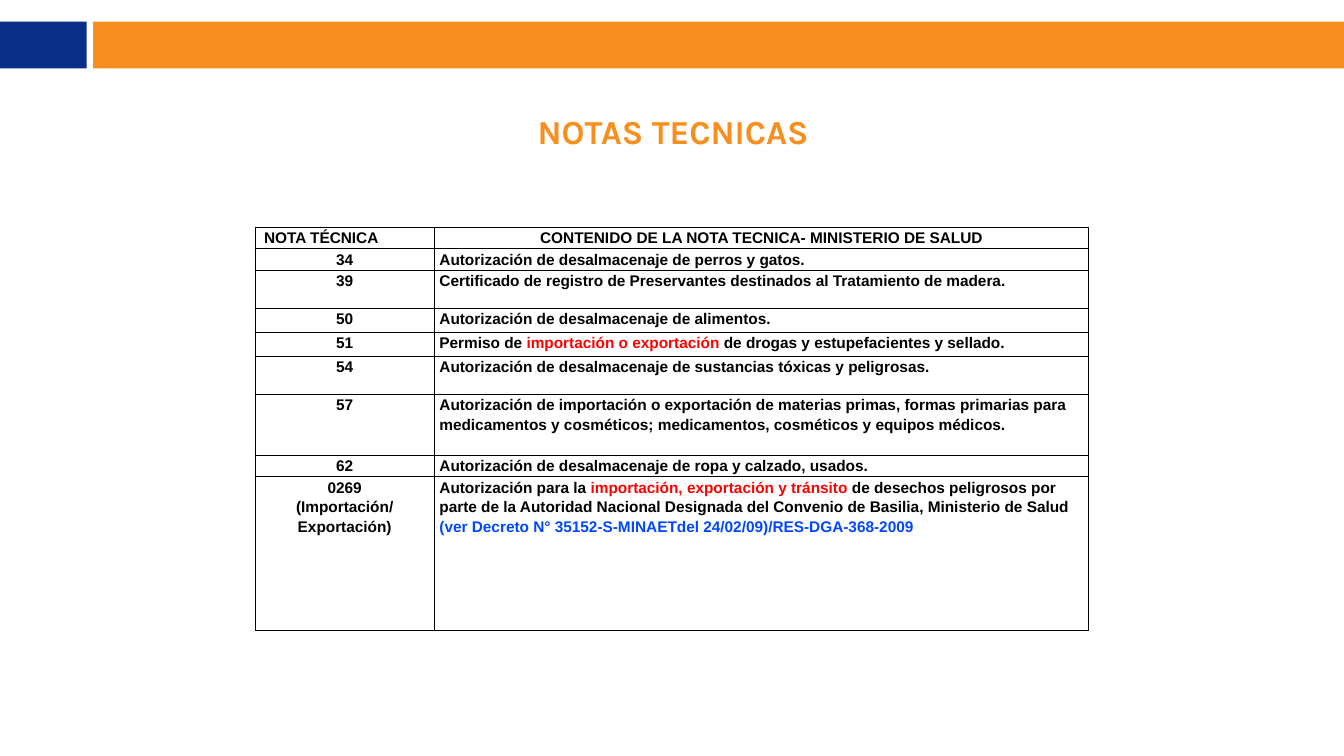
from dataclasses import dataclass

from lxml import etree
from pptx import Presentation
from pptx.dml.color import RGBColor
from pptx.enum.shapes import MSO_SHAPE
from pptx.enum.text import MSO_ANCHOR, PP_ALIGN
from pptx.oxml.ns import qn
from pptx.util import Emu, Pt

RECTANGLE = MSO_SHAPE.RECTANGLE
LEFT, CENTER = PP_ALIGN.LEFT, PP_ALIGN.CENTER
MIDDLE = MSO_ANCHOR.MIDDLE
PX = 9144  # 100 px to the inch


@dataclass(frozen=True)
class Theme:
    navy: str = "072F87"
    orange: str = "F78E1E"
    black: str = "000000"
    red: str = "FF0000"
    blue: str = "0047FF"
    title_font: str = "Karla"
    table_font: str = "Arial"
    title_size: int = 48
    table_size: int = 22
    line_spacing: float = 1.15
    border_width: int = 1


THEME = Theme()

# Content
SLIDE_SIZE = (2667, 1500)
BANDS = [((-4, 43, 176, 93), THEME.navy), ((185, 43, 2483, 93), THEME.orange)]
TITLE = "NOTAS TECNICAS"
TITLE_BOX = (436, 215, 1800, 92)
TITLE_INSET = 6
TABLE_ORIGIN = (506, 451)
COLUMN_WIDTHS = (356, 1298)
CELL_INSET = 10
HEADER_INDENT = 8

HEADER = ("NOTA TÉCNICA", "CONTENIDO DE LA NOTA TECNICA- MINISTERIO DE SALUD")

# Row height, lines of the note number, coloured parts of its description
NOTES = [
    (42, ["34"], [("Autorización de desalmacenaje de perros y gatos.", THEME.black)]),
    (76, ["39"], [("Certificado de registro de Preservantes destinados al "
                   "Tratamiento de madera.", THEME.black)]),
    (48, ["50"], [("Autorización de desalmacenaje de alimentos.", THEME.black)]),
    (47, ["51"], [("Permiso de ", THEME.black),
                  ("importación o exportación ", THEME.red),
                  ("de drogas y estupefacientes y sellado.", THEME.black)]),
    (76, ["54"], [("Autorización de desalmacenaje de sustancias tóxicas y "
                   "peligrosas.", THEME.black)]),
    (121, ["57"], [("Autorización de importación o exportación de materias primas, "
                    "formas primarias para medicamentos y cosméticos; medicamentos, "
                    "cosméticos y equipos médicos.", THEME.black)]),
    (42, ["62"], [("Autorización de desalmacenaje de ropa y calzado, usados.",
                   THEME.black)]),
    (305, ["0269", "(Importación/Exportación)"],
     [("Autorización para la ", THEME.black),
      ("importación, exportación y tránsito", THEME.red),
      (" de desechos peligrosos por parte de la Autoridad Nacional Designada "
       "del Convenio de Basilia, Ministerio de Salud ", THEME.black),
      ("(ver Decreto N° 35152-S-MINAETdel 24/02/09)/RES-DGA-368-2009", THEME.blue)]),
]
HEADER_HEIGHT = 42


def px(*lengths):
    return [Emu(length * PX) for length in lengths]


def add_run(paragraph, text, font_name, size, color):
    run = paragraph.add_run()
    run.text = text
    run.font.name = font_name
    run.font.size = Pt(size)
    run.font.bold = True
    run.font.color.rgb = RGBColor.from_string(color)


def set_insets(target, horizontal, vertical):
    target.margin_left, target.margin_right = px(horizontal, horizontal)
    target.margin_top, target.margin_bottom = px(vertical, vertical)


def add_borders(cell):
    properties = cell._tc.get_or_add_tcPr()
    for index, side in enumerate(("lnL", "lnR", "lnT", "lnB")):
        line = etree.Element(qn(f"a:{side}"), w=str(Pt(THEME.border_width)))
        fill = etree.SubElement(line, qn("a:solidFill"))
        etree.SubElement(fill, qn("a:srgbClr"), val=THEME.black)
        properties.insert(index, line)


def fill_cell(cell, paragraphs, alignment):
    set_insets(cell, CELL_INSET, 0)
    cell.fill.background()
    add_borders(cell)
    for index, parts in enumerate(paragraphs):
        frame = cell.text_frame
        paragraph = frame.add_paragraph() if index else frame.paragraphs[0]
        paragraph.alignment = alignment
        paragraph.line_spacing = THEME.line_spacing
        for text, color in parts:
            add_run(paragraph, text, THEME.table_font, THEME.table_size, color)


def add_bands(slide):
    for box, color in BANDS:
        band = slide.shapes.add_shape(RECTANGLE, *px(*box))
        band.shadow.inherit = False
        band.fill.solid()
        band.fill.fore_color.rgb = RGBColor.from_string(color)
        band.line.fill.background()


def add_title(slide):
    frame = slide.shapes.add_textbox(*px(*TITLE_BOX)).text_frame
    frame.word_wrap = True
    frame.vertical_anchor = MIDDLE
    set_insets(frame, TITLE_INSET, TITLE_INSET)
    heading = frame.paragraphs[0]
    heading.alignment = CENTER
    add_run(heading, TITLE, THEME.title_font, THEME.title_size, THEME.orange)


def add_notes_table(slide):
    heights = [HEADER_HEIGHT] + [height for height, _, _ in NOTES]
    notes_table = slide.shapes.add_table(
        len(heights), len(COLUMN_WIDTHS),
        *px(*TABLE_ORIGIN, sum(COLUMN_WIDTHS), sum(heights))).table
    notes_table.first_row = False
    notes_table.horz_banding = False
    for column, width in zip(notes_table.columns, px(*COLUMN_WIDTHS)):
        column.width = width
    for row, height in zip(notes_table.rows, px(*heights)):
        row.height = height

    # Header row
    for column, (text, alignment) in enumerate(zip(HEADER, (LEFT, CENTER))):
        fill_cell(notes_table.cell(0, column), [[(text, THEME.black)]], alignment)
    notes_table.cell(0, 0).margin_left = px(CELL_INSET + HEADER_INDENT)[0]

    # One row per technical note
    for row, (_, number_lines, description) in enumerate(NOTES, start=1):
        number = [[(line, THEME.black)] for line in number_lines]
        fill_cell(notes_table.cell(row, 0), number, CENTER)
        fill_cell(notes_table.cell(row, 1), [description], LEFT)


def main():
    deck = Presentation()
    deck.slide_width, deck.slide_height = px(*SLIDE_SIZE)
    slide = deck.slides.add_slide(deck.slide_layouts[6])
    add_bands(slide)
    add_title(slide)
    add_notes_table(slide)
    deck.save("out.pptx")


if __name__ == "__main__":
    main()
